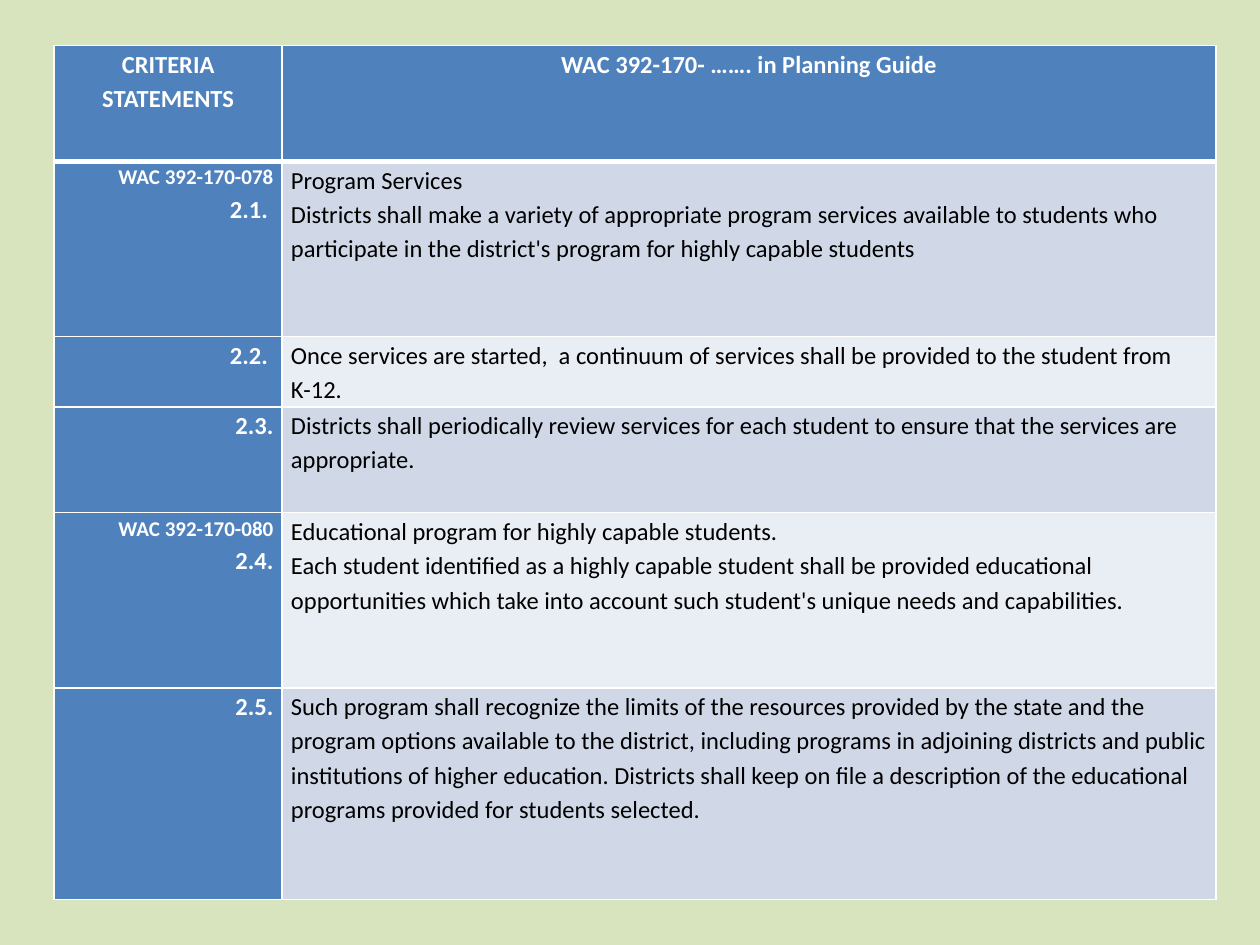
from lxml import etree
from pptx import Presentation
from pptx import util as u
from pptx.dml.color import RGBColor
from pptx.enum import text
from pptx.oxml.ns import qn

COLORS = {
    "background": "D7E4BD",
    "header": "4F81BD",
    "odd_row": "D0D8E8",
    "even_row": "E9EDF4",
    "light": "FFFFFF",
    "dark": "000000",
}
FONT = "Calibri"
TABLE_LEFT, TABLE_TOP = 0.43, 0.36
COLUMN_WIDTHS = [1.81, 7.41]
ROW_HEIGHTS = [0.92, 1.39, 0.56, 0.84, 1.39, 1.68]
HEADINGS = ["CRITERIA STATEMENTS", "WAC 392-170- ……. in Planning Guide"]
TEXT_SIZE, CODE_SIZE = 14, 12

# Each criterion: WAC code (if any), number, paragraphs of the statement
CRITERIA = [
    ("WAC 392-170-078", "2.1. ", [
        "Program Services",
        "Districts shall make a variety of appropriate program services available to "
        "students who participate in the district's program for highly capable students",
    ]),
    (None, "2.2. ", [
        "Once services are started,  a continuum of services shall be provided to the "
        "student from K-12.",
    ]),
    (None, "2.3.", [
        "Districts shall periodically review services for each student to ensure that "
        "the services are appropriate.",
    ]),
    ("WAC 392-170-080", "2.4.", [
        "Educational program for highly capable students.",
        "Each student identified as a highly capable student shall be provided "
        "educational opportunities which take into account such student's unique needs "
        "and capabilities.",
    ]),
    (None, "2.5.", [
        "Such program shall recognize the limits of the resources provided by the state "
        "and the program options available to the district, including programs in "
        "adjoining districts and public institutions of higher education. Districts "
        "shall keep on file a description of the educational programs provided for "
        "students selected.",
    ]),
]


def color(name):
    return RGBColor.from_string(COLORS[name])


def set_borders(cell, widths):
    """Draw the cell's borders; widths are points for left, right, top, bottom."""
    properties = cell._tc.get_or_add_tcPr()
    for index, (side, width) in enumerate(zip("LRTB", widths)):
        line = etree.Element(qn(f"a:ln{side}"), w=str(u.Pt(width)))
        fill = etree.SubElement(line, qn("a:solidFill"))
        etree.SubElement(fill, qn("a:srgbClr"), val=COLORS["light"])
        properties.insert(index, line)


def fill_cell(cell, lines, fill, alignment, font_color="light", bold=True,
              borders=(1, 1, 1, 1)):
    """Write (text, size) lines into a cell and style it."""
    cell.margin_left = cell.margin_right = u.Inches(0.07)
    cell.margin_top = cell.margin_bottom = 0
    cell.fill.solid()
    cell.fill.fore_color.rgb = color(fill)
    set_borders(cell, borders)
    cell.text_frame.text = "\n".join(line for line, _ in lines)
    for paragraph, (_, size) in zip(cell.text_frame.paragraphs, lines):
        paragraph.alignment = alignment
        paragraph.line_spacing = 1.15
        paragraph.font.name = FONT
        paragraph.font.size = u.Pt(size)
        paragraph.font.bold = bold
        paragraph.font.color.rgb = color(font_color)


def add_criteria_table(slide):
    table = slide.shapes.add_table(
        len(ROW_HEIGHTS), len(COLUMN_WIDTHS),
        u.Inches(TABLE_LEFT), u.Inches(TABLE_TOP),
        u.Inches(sum(COLUMN_WIDTHS)), u.Inches(sum(ROW_HEIGHTS)),
    ).table
    for column, width in zip(table.columns, COLUMN_WIDTHS):
        column.width = u.Inches(width)
    for row, height in zip(table.rows, ROW_HEIGHTS):
        row.height = u.Inches(height)
    return table


def fill_headings(table):
    for column, heading in enumerate(HEADINGS):
        fill_cell(table.cell(0, column), [(heading, TEXT_SIZE)], "header",
                  text.PP_ALIGN.CENTER, borders=(1, 1, 1, 3))


def fill_criterion(table, row, code, number, statement):
    labels = [(code, CODE_SIZE)] if code else []
    labels.append((number, TEXT_SIZE))
    top = 3 if row == 1 else 1
    borders = (1, 1, top, 1)
    fill_cell(table.cell(row, 0), labels, "header", text.PP_ALIGN.RIGHT,
              borders=borders)
    fill_cell(table.cell(row, 1), [(line, TEXT_SIZE) for line in statement],
              "odd_row" if row % 2 else "even_row", text.PP_ALIGN.LEFT,
              font_color="dark", bold=False, borders=borders)


def main():
    presentation = Presentation()
    presentation.slide_width = u.Inches(10)
    presentation.slide_height = u.Inches(7.5)
    slide = presentation.slides.add_slide(presentation.slide_layouts[6])
    slide.background.fill.solid()
    slide.background.fill.fore_color.rgb = color("background")

    table = add_criteria_table(slide)
    fill_headings(table)
    for row, criterion in enumerate(CRITERIA, start=1):
        fill_criterion(table, row, *criterion)
    presentation.save("out.pptx")


if __name__ == "__main__":
    main()
